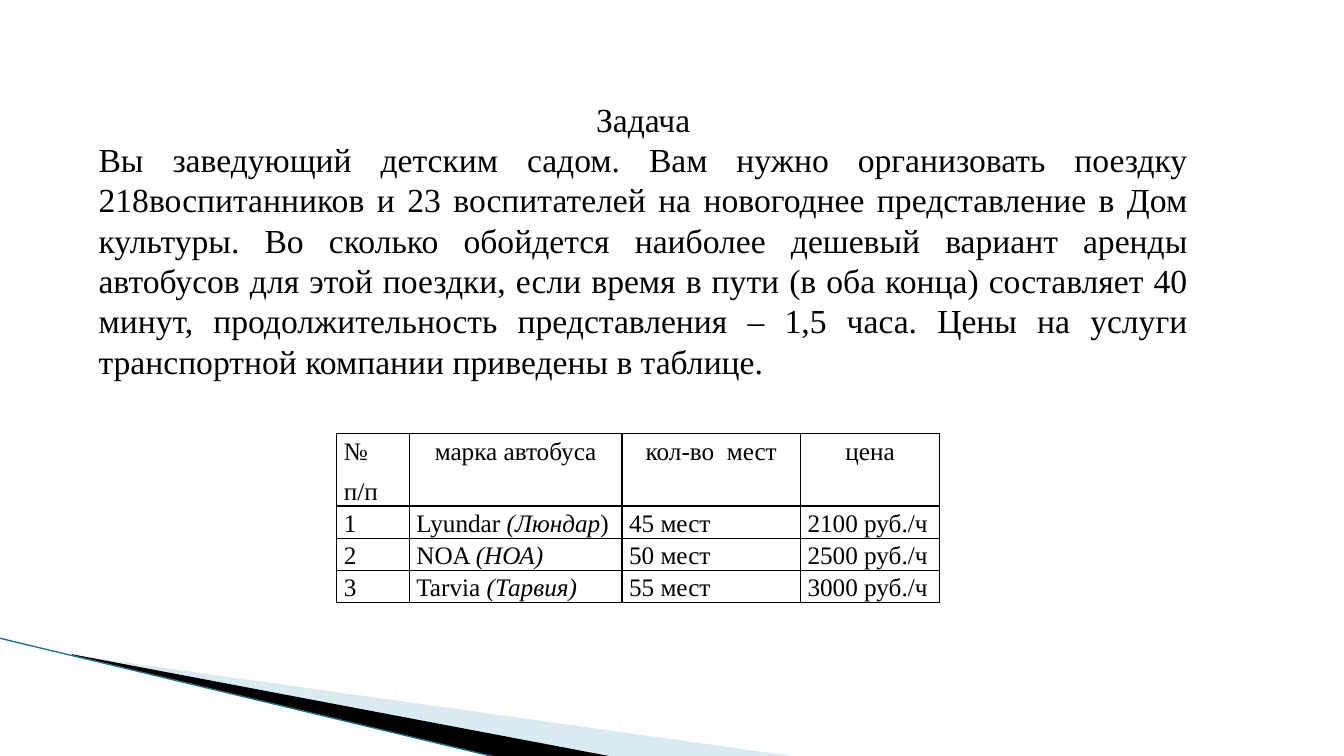
from lxml import etree
from pptx import Presentation
from pptx.dml.color import RGBColor
from pptx.enum.shapes import MSO_CONNECTOR
from pptx.enum.text import MSO_ANCHOR, PP_ALIGN
from pptx.oxml.ns import qn
from pptx.oxml.xmlchemy import OxmlElement
from pptx.util import Inches, Pt


def rgb(value):
    return RGBColor.from_string(value)


def style(p, size, align):
    p.alignment = align
    p.font.name = "Times New Roman"
    p.font.size = Pt(size)
    p.font.color.rgb = rgb("000000")


prs = Presentation()
prs.slide_width, prs.slide_height = Inches(13.33), Inches(7.5)
s = prs.slides.add_slide(prs.slide_layouts[6])

wedges = [
    ([(0.73, 6.5), (7.93, 7.51), (6.08, 7.51)], "A0CBDC", 40),
    ([(0.71, 6.49), (6.09, 7.51), (4.96, 7.52), (0.72, 6.5)], "000000", 100),
]
for points, color, opacity in wedges:
    points = [(Inches(x), Inches(y)) for x, y in points]
    fb = s.shapes.build_freeform(*points[0])
    fb.add_line_segments(points[1:], close=True)
    wedge = fb.convert_to_shape()
    wedge.shadow.inherit = False
    wedge.fill.solid()
    wedge.fill.fore_color.rgb = rgb(color)
    wedge.line.fill.background()
    if opacity < 100:
        clr = wedge.fill._xPr.find(qn("a:solidFill"))[0]
        etree.SubElement(clr, qn("a:alpha")).set("val", str(opacity * 1000))

edge = s.shapes.add_connector(
    MSO_CONNECTOR.STRAIGHT, Inches(-0.01), Inches(6.33), Inches(4.95), Inches(7.52))
edge.line.color.rgb = rgb("1C7287")
edge.line.width = Pt(0.95)
edge._element.spPr.append(OxmlElement("a:effectLst"))

rows = [
    ["№\nп/п", "марка автобуса", "кол-во  мест", "цена"],
    ["1", ("Lyundar ", "(Люндар", ")"), "45 мест", "2100 руб./ч"],
    ["2", ("NOA ", "(НОА)"), "50 мест", "2500 руб./ч"],
    ["3", ("Tarvia ", "(Тарвия)"), "55 мест", "3000 руб./ч"],
]
widths = [0.72, 2.11, 1.77, 1.38]
heights = [0.72, 0.31, 0.31, 0.31]
table = s.shapes.add_table(
    len(rows), len(widths), Inches(3.34), Inches(4.3),
    Inches(sum(widths)), Inches(sum(heights))).table
for column, width in zip(table.columns, widths):
    column.width = Inches(width)
for row, height in zip(table.rows, heights):
    row.height = Inches(height)

for i, row in enumerate(rows):
    for j, content in enumerate(row):
        cell = table.cell(i, j)
        cell.margin_left = cell.margin_right = Inches(0.07)
        cell.margin_top = cell.margin_bottom = 0
        tf = cell.text_frame
        if isinstance(content, tuple):
            for k, part in enumerate(content):
                r = tf.paragraphs[0].add_run()
                r.text = part
                r.font.italic = k == 1
        else:
            tf.text = content
        for k, p in enumerate(tf.paragraphs):
            style(p, 18, PP_ALIGN.CENTER if i == 0 and j else PP_ALIGN.JUSTIFY)
            p.line_spacing = 1.15
            if k:
                p.space_before = Pt(6)
        tcPr = cell._tc.get_or_add_tcPr()
        for side in ("a:lnL", "a:lnR", "a:lnT", "a:lnB"):
            ln = etree.SubElement(tcPr, qn(side), w=str(Pt(1)))
            fill = etree.SubElement(ln, qn("a:solidFill"))
            etree.SubElement(fill, qn("a:srgbClr"), val="000000")
        cell.fill.background()

tf = s.shapes.add_textbox(Inches(0.88), Inches(0.93), Inches(11), Inches(3.23)).text_frame
tf.word_wrap = True
tf.vertical_anchor = MSO_ANCHOR.TOP
tf.text = "Задача"
style(tf.paragraphs[0], 24, PP_ALIGN.CENTER)
p = tf.add_paragraph()
p.text = (
    "Вы заведующий детским садом. Вам нужно организовать поездку "
    "218воспитанников и 23 воспитателей на новогоднее представление в Дом "
    "культуры. Во сколько обойдется наиболее дешевый вариант аренды "
    "автобусов для этой поездки, если время в пути (в оба конца) составляет 40 "
    "минут, продолжительность представления – 1,5 часа. Цены на услуги "
    "транспортной компании приведены в таблице."
)
style(p, 24, PP_ALIGN.JUSTIFY)

prs.save("out.pptx")
